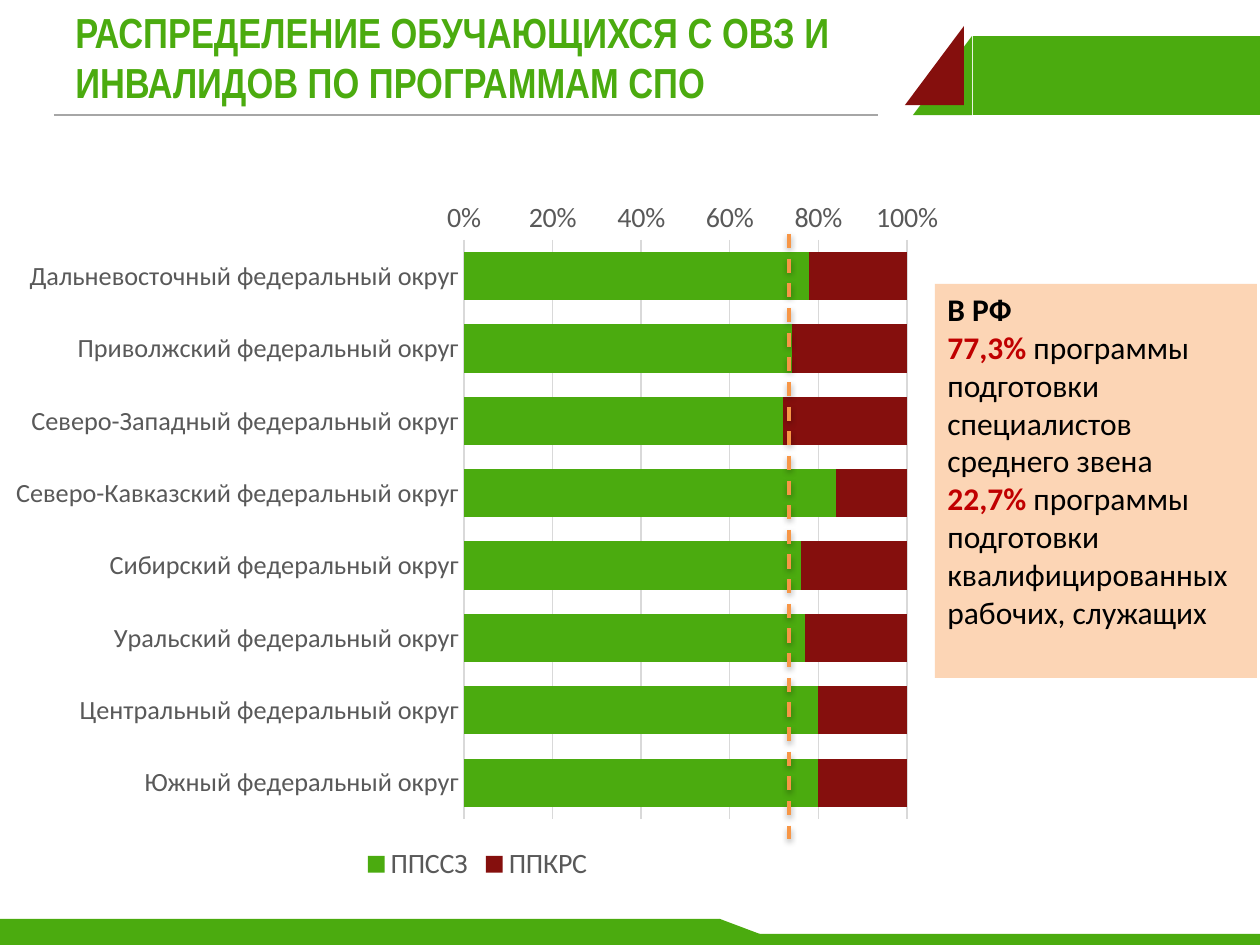
from lxml.etree import SubElement as Sub
from pptx import Presentation
from pptx.chart.data import CategoryChartData as Data
from pptx.dml.color import RGBColor as RGB
from pptx.enum.chart import XL_CHART_TYPE as Chart, XL_LEGEND_POSITION as Spot
from pptx.enum.chart import XL_TICK_LABEL_POSITION as Label, XL_TICK_MARK as Tick
from pptx.enum.dml import MSO_LINE as Dash
from pptx.enum.shapes import MSO_CONNECTOR as Link, MSO_SHAPE as Shape
from pptx.enum.text import MSO_ANCHOR as Anchor, PP_ALIGN as Align
from pptx.oxml.ns import qn
from pptx.util import Pt

COLORS = {
    "green": "4BAB0F", "wine": "850F0D", "peach": "FCD5B5", "red": "C00000",
    "orange": "F79646", "black": "000000", "text": "595959",
    "rule": "A6A6A6", "grid": "D9D9D9",
}
SCALE = 914400 / 126
REGIONS = ["Дальневосточный", "Приволжский", "Северо-Западный", "Северо-Кавказский",
           "Сибирский", "Уральский", "Центральный", "Южный"]
SHARES = [78, 74, 72, 84, 76, 77, 80, 80]
NOTES = [
    ("В РФ", "black", ""),
    ("77,3% ", "red", "программы подготовки специалистов среднего звена"),
    ("22,7% ", "red", "программы подготовки квалифицированных рабочих, служащих"),
]


def emu(*sizes):
    return [round(size * SCALE) for size in sizes]


def color(name):
    return RGB.from_string(COLORS[name])


class Deck:
    """Draws styled elements on the current slide."""

    def __init__(self, width, height, font):
        self.prs = Presentation()
        self.prs.slide_width, self.prs.slide_height = emu(width, height)
        self.slide = self.prs.slides.add_slide(self.prs.slide_layouts[6])
        self.font = font

    def style(self, font, size, ink, bold=None, face=None):
        font.name, font.size, font.bold = face or self.font, Pt(size), bold
        font.color.rgb = color(ink)

    def shape(self, kind, box, fill, flip=False):
        item = self.slide.shapes.add_shape(kind, *emu(*box))
        item.shadow.inherit = False
        item.fill.solid()
        item.fill.fore_color.rgb = color(fill)
        item.line.fill.background()
        if flip:
            item._element.spPr.xfrm.set("flipH", "1")
        return item

    def line(self, start, end, ink, width, dash=None, glow=False):
        item = self.slide.shapes.add_connector(Link.STRAIGHT, *emu(*start, *end))
        item.line.color.rgb = color(ink)
        item.line.width = Pt(width)
        if dash:
            item.line.dash_style = dash
        effect = Sub(item._element.spPr, qn("a:effectLst"))
        if glow:
            cast = Sub(effect, qn("a:outerShdw"), blurRad=str(Pt(3.1)),
                       dist=str(Pt(1.6)), dir="5400000", rotWithShape="0")
            tone = Sub(cast, qn("a:srgbClr"), val=COLORS["black"])
            Sub(tone, qn("a:alpha"), val="38000")

    def title(self, box, text):
        frame = self.slide.shapes.add_textbox(*emu(*box)).text_frame
        frame.word_wrap = True
        frame.vertical_anchor = Anchor.MIDDLE
        frame.text = text
        self.style(frame.paragraphs[0].font, 24, "green", True, "Arial Narrow")

    def note(self, box, rows):
        frame = self.shape(Shape.RECTANGLE, box, "peach").text_frame
        frame.word_wrap = True
        frame.vertical_anchor = Anchor.TOP
        for i, (lead, ink, rest) in enumerate(rows):
            para = frame.add_paragraph() if i else frame.paragraphs[0]
            para.alignment = Align.LEFT
            self.style(para.font, 18, "black")
            run = para.add_run()
            run.text = lead
            self.style(run.font, 18, ink, True)
            if rest:
                run = para.add_run()
                run.text = rest
                self.style(run.font, 18, "black", False)

    def bars(self, box, cats, series, plot_box):
        data = Data()
        data.categories = cats
        for name, vals, _ in series:
            data.add_series(name, vals)
        chart = self.slide.shapes.add_chart(
            Chart.BAR_STACKED_100, *emu(*box), data).chart
        self.style(chart.font, 16, "black")
        chart.has_title = False
        chart.has_legend = True
        chart.legend.position = Spot.BOTTOM
        chart.legend.include_in_layout = False
        self.style(chart.legend.font, 16, "text")
        plot = chart.plots[0]
        plot.gap_width, plot.overlap = 50, 100
        plot.vary_by_categories = False
        for item, (_, _, ink) in zip(plot.series, series):
            item.format.fill.solid()
            item.format.fill.fore_color.rgb = color(ink)
        for axis, size in ((chart.category_axis, 15), (chart.value_axis, 16)):
            axis.major_tick_mark = axis.minor_tick_mark = Tick.NONE
            axis.tick_label_position = Label.NEXT_TO_AXIS
            self.style(axis.tick_labels.font, size, "text")
        cat, val = chart.category_axis, chart.value_axis
        cat.reverse_order = True
        val.has_major_gridlines = True
        val.major_unit = 0.2
        val.minimum_scale, val.maximum_scale = 0, 1
        val.tick_labels.number_format = "0%"
        val.tick_labels.number_format_is_linked = False
        val.format.line.fill.background()
        for part in (cat, val.major_gridlines):
            part.format.line.color.rgb = color("grid")
            part.format.line.width = Pt(0.75)
        self.layout(chart, box, plot_box)

    def layout(self, chart, box, inner):
        area = chart._chartSpace.chart.plotArea
        for old in area.findall(qn("c:layout")):
            area.remove(old)
        place = Sub(area, qn("c:layout"))
        area.insert(0, place)
        left, top, width, height = box
        x, y, w, h = inner
        form = Sub(place, qn("c:manualLayout"))
        values = {"layoutTarget": "inner", "xMode": "edge", "yMode": "edge",
                  "x": (x - left) / width, "y": (y - top) / height,
                  "w": w / width, "h": h / height}
        for key, value in values.items():
            Sub(form, qn("c:" + key), val=str(value))


def main():
    deck = Deck(1260, 945, "Calibri")
    deck.line((54, 115), (878, 115), "rule", 0.75)
    deck.shape(Shape.RECTANGLE, (973, 36, 287, 79), "green")
    deck.shape(Shape.RIGHT_TRIANGLE, (913, 36, 59, 79), "green", True)
    deck.shape(Shape.RECTANGLE, (0, 919, 720, 26), "green")
    deck.shape(Shape.RIGHT_TRIANGLE, (720, 919, 69, 26), "green")
    deck.shape(Shape.RECTANGLE, (302, 934, 958, 11), "green")
    deck.shape(Shape.RIGHT_TRIANGLE, (905, 26, 59, 79), "wine", True)
    deck.title((63, 3, 895, 107),
               "РАСПРЕДЕЛЕНИЕ ОБУЧАЮЩИХСЯ С ОВЗ И ИНВАЛИДОВ ПО ПРОГРАММАМ СПО")
    deck.note((935, 284, 322, 394), NOTES)
    deck.bars((-2, 186, 959, 701),
              [f"{name} федеральный округ" for name in REGIONS],
              [("ППССЗ", SHARES, "green"),
               ("ППКРС", [100 - share for share in SHARES], "wine")],
              (464, 240, 443, 579))
    deck.line((789, 234), (789, 839), "orange", 2, Dash.DASH, True)
    deck.prs.save("out.pptx")


if __name__ == "__main__":
    main()
